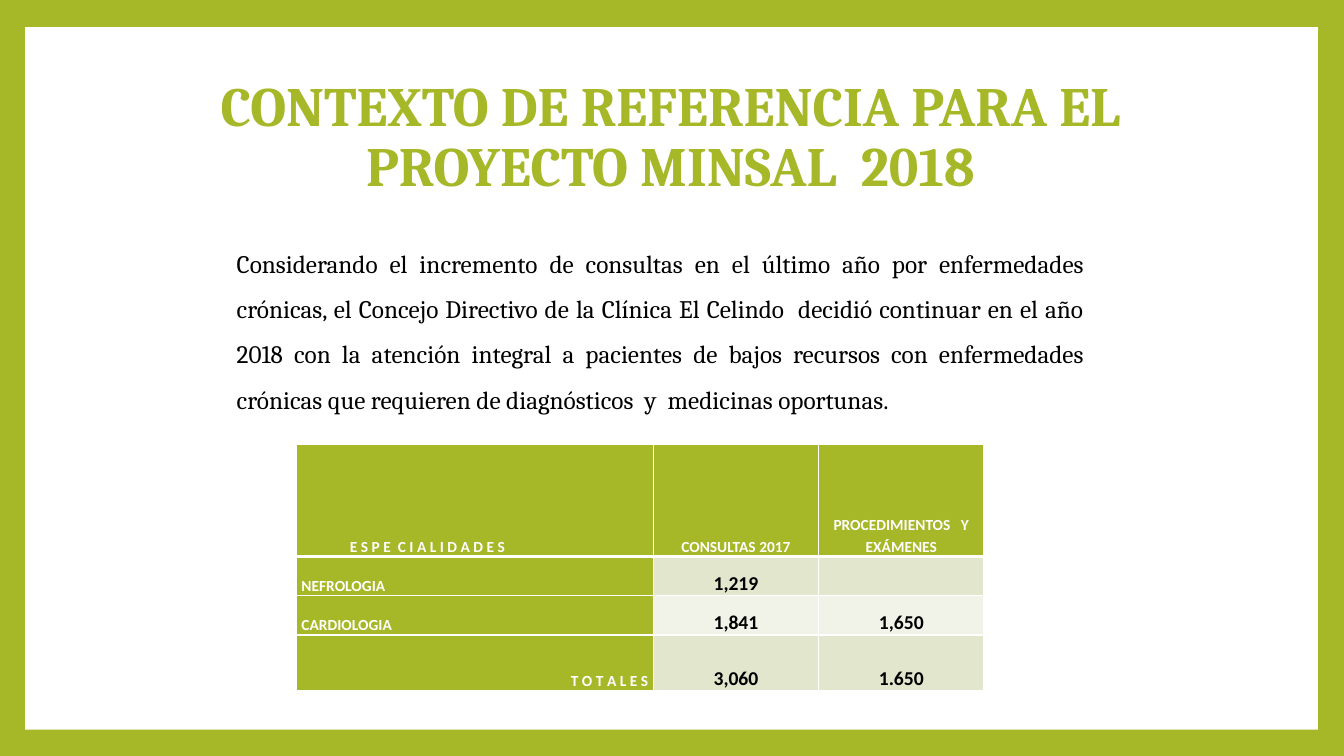
from lxml import etree
from pptx import Presentation
from pptx.dml.color import RGBColor
from pptx.enum.shapes import MSO_SHAPE
from pptx.enum.text import MSO_ANCHOR, PP_ALIGN
from pptx.oxml.ns import qn
from pptx.util import Inches, Pt

GREEN = RGBColor(0xA6, 0xB7, 0x27)
BAND_DARK = RGBColor(0xE1, 0xE6, 0xCD)
BAND_LIGHT = RGBColor(0xF1, 0xF3, 0xE8)
WHITE = RGBColor(0xFF, 0xFF, 0xFF)
BLACK = RGBColor(0, 0, 0)

RECTANGLE = MSO_SHAPE.RECTANGLE
MIDDLE, TOP, BOTTOM = MSO_ANCHOR.MIDDLE, MSO_ANCHOR.TOP, MSO_ANCHOR.BOTTOM
LEFT, CENTER, RIGHT = PP_ALIGN.LEFT, PP_ALIGN.CENTER, PP_ALIGN.RIGHT
JUSTIFY = PP_ALIGN.JUSTIFY

TITLE = "CONTEXTO DE REFERENCIA PARA EL PROYECTO MINSAL  2018"
BODY = (
    "Considerando el incremento de consultas en el último año por enfermedades "
    "crónicas, el Concejo Directivo de la Clínica El Celindo  decidió continuar "
    "en el año 2018 con la atención integral a pacientes de bajos recursos con "
    "enfermedades crónicas que requieren de diagnósticos  y  medicinas oportunas."
)
ROWS = [
    ("E S P E  C I A L I D A D E S", "CONSULTAS 2017", "PROCEDIMIENTOS   Y EXÁMENES"),
    ("NEFROLOGIA", "1,219", ""),
    ("CARDIOLOGIA", "1,841", "1,650"),
    ("T O T A L E S", "3,060", "1.650"),
]
COL_WIDTHS = (3.54, 1.64, 1.64)
ROW_HEIGHTS = (1.11, 0.39, 0.39, 0.55)


def style_paragraph(p, text, font, size, color, bold, align, spacing):
    p.text = text
    p.alignment = align
    p.line_spacing = spacing
    p.font.name = font
    p.font.size = Pt(size)
    p.font.bold = bold
    p.font.color.rgb = color


def add_panel(s):
    panel = s.shapes.add_shape(
        RECTANGLE, Inches(0.25), Inches(0.27), Inches(12.82), Inches(6.97))
    panel.shadow.inherit = False
    panel.fill.solid()
    panel.fill.fore_color.rgb = WHITE
    panel.line.fill.background()


def add_text(s, box, anchor, text, size, color, bold, align, spacing):
    tf = s.shapes.add_textbox(*(Inches(v) for v in box)).text_frame
    tf.word_wrap = True
    tf.vertical_anchor = anchor
    style_paragraph(tf.paragraphs[0], text, "Cambria", size, color, bold, align, spacing)


def set_borders(cell, top, bottom):
    """Draw white cell borders; top and bottom widths are in points."""
    tc_pr = cell._tc.get_or_add_tcPr()
    widths = {"a:lnL": 1, "a:lnR": 1, "a:lnT": top, "a:lnB": bottom}
    for i, (tag, width) in enumerate(widths.items()):
        ln = etree.Element(qn(tag), w=str(Pt(width)))
        fill = etree.SubElement(ln, qn("a:solidFill"))
        etree.SubElement(fill, qn("a:srgbClr"), val=str(WHITE))
        tc_pr.insert(i, ln)


def fill_cell(cell, row, col, text):
    is_label = row == 0 or col == 0
    band = BAND_DARK if row % 2 else BAND_LIGHT
    if row == len(ROWS) - 1:
        band = BAND_DARK
    cell.fill.solid()
    cell.fill.fore_color.rgb = GREEN if is_label else band
    cell.vertical_anchor = BOTTOM
    cell.margin_left = Inches(0.53 if row == col == 0 else 0.05)
    cell.margin_right = Inches(0.05)
    cell.margin_top = cell.margin_bottom = 0
    align = CENTER
    if col == 0:
        align = RIGHT if row == len(ROWS) - 1 else LEFT
    style_paragraph(cell.text_frame.paragraphs[0], text, "Calibri",
                    11 if is_label else 14, WHITE if is_label else BLACK,
                    True, align, 1.15)
    set_borders(cell, 3 if row == 1 else 1, 3 if row == 0 else 1)


def add_specialties_table(s):
    table = s.shapes.add_table(
        len(ROWS), len(COL_WIDTHS), Inches(2.94), Inches(4.41),
        Inches(sum(COL_WIDTHS)), Inches(sum(ROW_HEIGHTS))).table
    table.first_col = True
    for column, width in zip(table.columns, COL_WIDTHS):
        column.width = Inches(width)
    for i, (height, values) in enumerate(zip(ROW_HEIGHTS, ROWS)):
        table.rows[i].height = Inches(height)
        for j, value in enumerate(values):
            fill_cell(table.cell(i, j), i, j, value)


def main():
    prs = Presentation()
    prs.slide_width, prs.slide_height = Inches(13.33), Inches(7.5)
    s = prs.slides.add_slide(prs.slide_layouts[6])
    s.background.fill.solid()
    s.background.fill.fore_color.rgb = GREEN
    add_panel(s)
    add_text(s, (1.25, 0.63, 10.8, 1.48), MIDDLE, TITLE, 39.6, GREEN, True, CENTER, 0.9)
    add_text(s, (2.25, 2.26, 8.6, 2.1), TOP, BODY, 18, BLACK, False, JUSTIFY, 1.5)
    add_specialties_table(s)
    prs.save("out.pptx")


if __name__ == "__main__":
    main()
